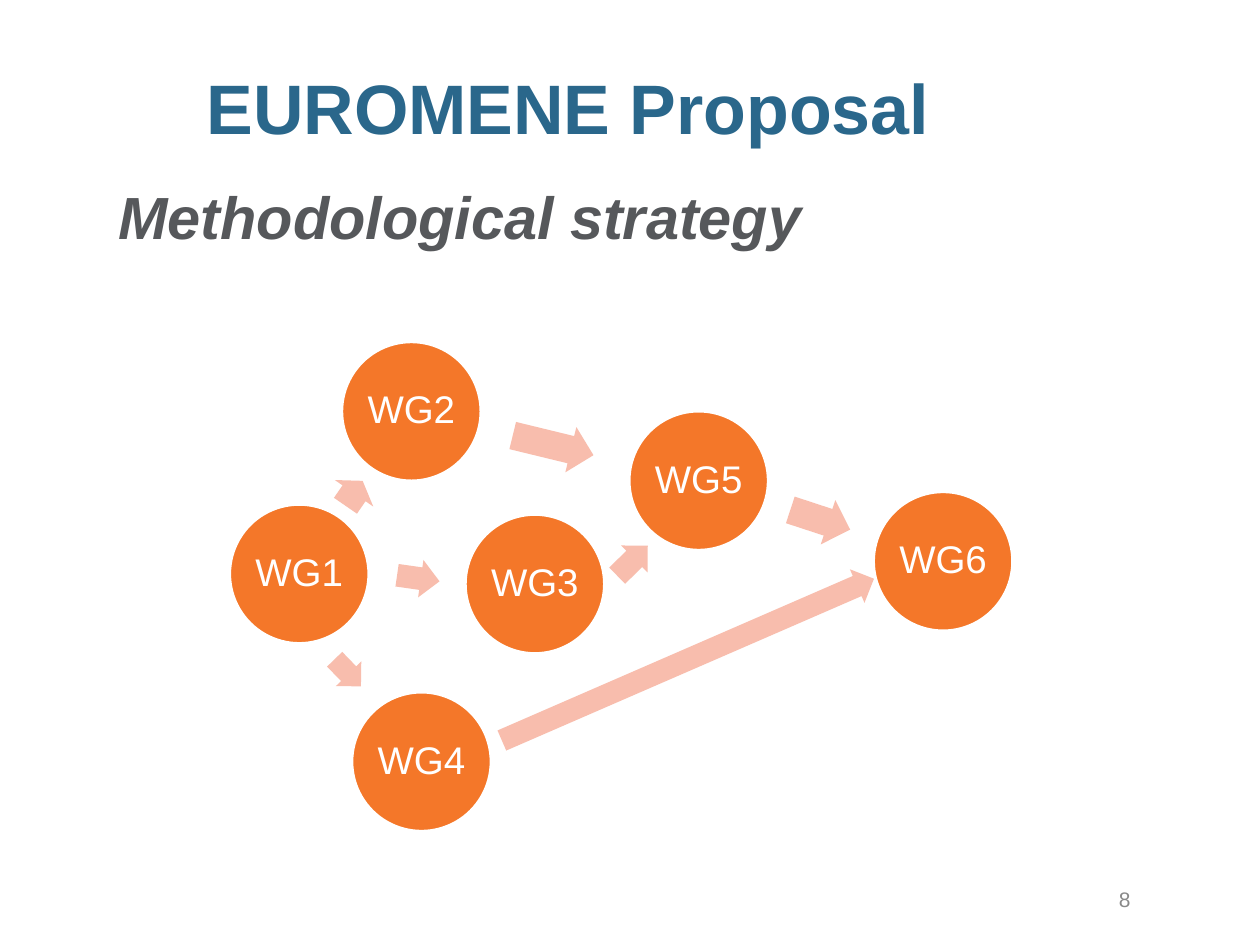
"""Build the EUROMENE methodological strategy slide with its working group diagram."""
from pptx import Presentation
from pptx.dml.color import RGBColor
from pptx.enum.shapes import MSO_SHAPE
from pptx.enum.text import MSO_ANCHOR, PP_ALIGN
from pptx.util import Inches, Pt

TEXTS = [
    ("EUROMENE Proposal", (1.54, 0.41, 7.72, 0.93),
     {"size": 40, "color": "2A678B", "bold": True}, PP_ALIGN.LEFT, MSO_ANCHOR.TOP, 0.1),
    ("Methodological strategy", (0.84, 1.33, 8.59, 0.64),
     {"size": 34, "color": "56585B", "bold": True, "italic": True},
     PP_ALIGN.LEFT, MSO_ANCHOR.TOP, 0.1),
    ("8", (8.45, 6.94, 0.62, 0.4),
     {"size": 12, "color": "898989"}, PP_ALIGN.RIGHT, MSO_ANCHOR.MIDDLE, 0.05),
]
DIAMETER = 1.11
GROUPS = {
    "WG1": (1.82, 4.0),
    "WG2": (2.71, 2.71),
    "WG3": (3.69, 4.08),
    "WG4": (2.79, 5.49),
    "WG5": (4.99, 3.26),
    "WG6": (6.93, 3.9),
}
GROUP_FORMAT = {"size": 22, "color": "FFFFFF"}
ARROWS = [
    ((2.69, 3.73, 0.24, 0.37), 304.6),
    ((3.15, 4.44, 0.34, 0.3), 8.1),
    ((2.61, 5.2, 0.3, 0.28), 45.9),
    ((4.06, 3.35, 0.66, 0.37), 13.7),
    ((4.85, 4.3, 0.34, 0.3), 315.5),
    ((6.26, 3.94, 0.5, 0.37), 18.2),
    ((3.85, 5.09, 3.22, 0.29), 336.5),
]


def rgb(value):
    """Return the colour for a hex string."""
    return RGBColor.from_string(value)


def write(shape, text, formatting, alignment, anchor, margins):
    """Put one formatted paragraph into a shape."""
    frame = shape.text_frame
    frame.word_wrap = True
    frame.vertical_anchor = anchor
    for side, margin in zip(("left", "top", "right", "bottom"), margins):
        setattr(frame, f"margin_{side}", Inches(margin))
    paragraph = frame.paragraphs[0]
    paragraph.text = text
    paragraph.alignment = alignment
    font = paragraph.runs[0].font
    font.name = "Arial"
    for name, value in formatting.items():
        if name == "color":
            font.color.rgb = rgb(value)
        else:
            setattr(font, name, Pt(value) if name == "size" else value)
    return paragraph


def add_filled(slide, kind, box, fill):
    """Add a preset shape with a solid fill and no shadow."""
    shape = slide.shapes.add_shape(kind, *map(Inches, box))
    shape.shadow.inherit = False
    shape.fill.solid()
    shape.fill.fore_color.rgb = rgb(fill)
    return shape


def main():
    """Create and save the presentation."""
    presentation = Presentation()
    presentation.slide_width, presentation.slide_height = Inches(10), Inches(7.5)
    slide = presentation.slides.add_slide(presentation.slide_layouts[6])

    for text, box, formatting, alignment, anchor, top in TEXTS:
        textbox = slide.shapes.add_textbox(*map(Inches, box))
        write(textbox, text, formatting, alignment, anchor, (0.1, top, 0.1, 0.05))

    for name, position in GROUPS.items():
        circle = add_filled(slide, MSO_SHAPE.OVAL, (*position, DIAMETER, DIAMETER), "F47729")
        circle.line.color.rgb = rgb("FFFFFF")
        circle.line.width = Pt(2)
        paragraph = write(circle, name, GROUP_FORMAT, PP_ALIGN.CENTER,
                          MSO_ANCHOR.MIDDLE, (0.03,) * 4)
        paragraph.line_spacing = 0.9

    for box, rotation in ARROWS:
        arrow = add_filled(slide, MSO_SHAPE.RIGHT_ARROW, box, "F8BDAD")
        arrow.line.fill.background()
        arrow.rotation = rotation
        arrow.adjustments[0], arrow.adjustments[1] = 0.6, 0.5

    presentation.save("out.pptx")


if __name__ == "__main__":
    main()
